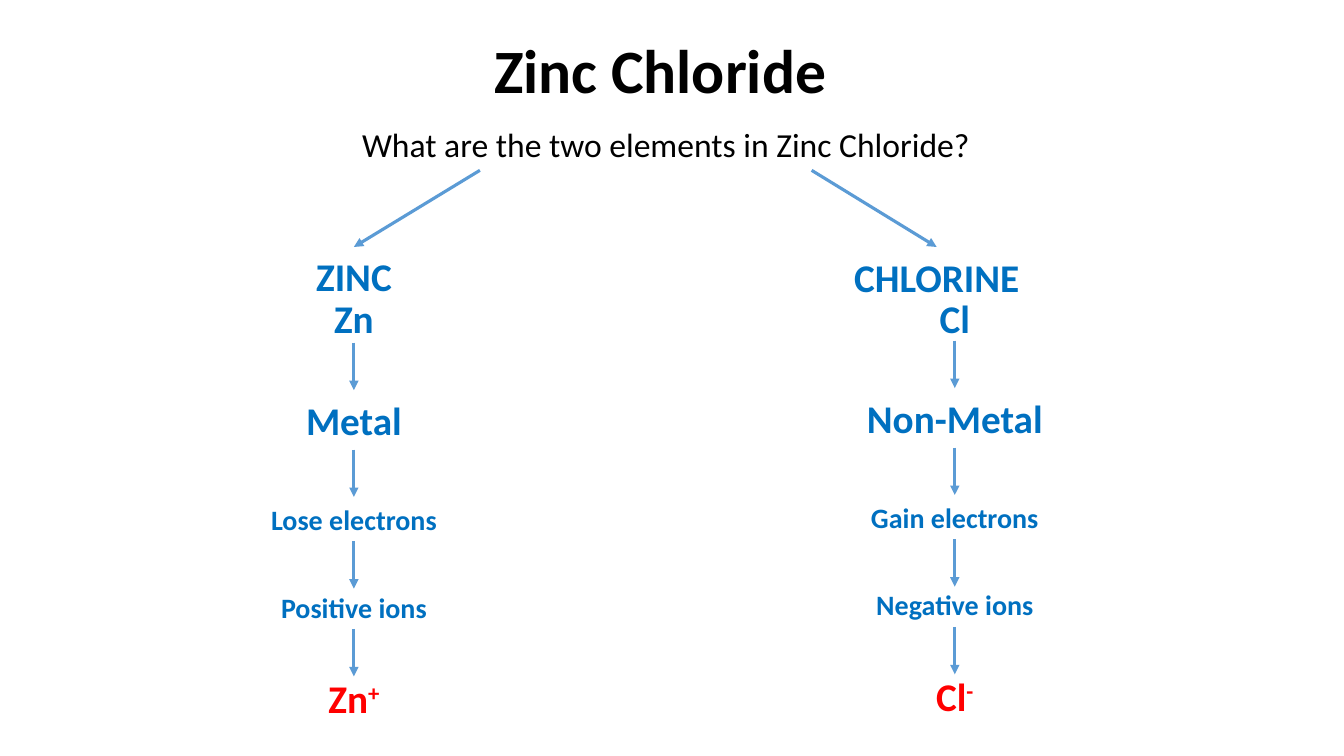
import pptx
import pptx.util
import pptx.dml.color
import pptx.enum.shapes
import pptx.enum.text
import pptx.oxml.ns
import lxml.etree

PX = 9144  # EMU per px, 100 px to the inch
COLORS = {"ink": "000000", "step": "0070C0", "ion": "FF0000", "arrow": "5B9BD5"}
COLUMN_WIDTH = 228
ARROW_LENGTH = 47
LARGE, SMALL = 28, 20
TEXT_HEIGHT = {LARGE: 57, SMALL: 44}
# Tops of each arrow and the step below it, relative to the column
STEP_ROWS = [(95, 143, LARGE), (201, 248, SMALL), (292, 335, SMALL)]
ION_ARROW, ION_TOP = 379, 419


def emu(*lengths):
    return [pptx.util.Emu(length * PX) for length in lengths]


def rgb(name):
    return pptx.dml.color.RGBColor.from_string(COLORS[name])


def add_text(page, bounds, text, size, color, bold=True, charge="", line_spacing=1.0):
    box = page.shapes.add_textbox(*emu(*bounds))
    frame = box.text_frame
    frame_format = {
        "word_wrap": True,
        "vertical_anchor": pptx.enum.text.MSO_ANCHOR.MIDDLE,
    }
    for name, value in frame_format.items():
        setattr(frame, name, value)
    para = frame.paragraphs[0]
    para.alignment = pptx.enum.text.PP_ALIGN.CENTER
    para.line_spacing = line_spacing
    font_format = {"name": "Calibri", "size": pptx.util.Pt(size), "bold": bold}
    for part in filter(None, (text, charge)):
        span = para.add_run()
        span.text = part
        for name, value in font_format.items():
            setattr(span.font, name, value)
        span.font.color.rgb = rgb(color)
    if charge:
        span.font._element.set("baseline", "30000")


def add_arrow(page, start, end):
    arrow = page.shapes.add_connector(
        pptx.enum.shapes.MSO_CONNECTOR.STRAIGHT, *emu(*start, *end)
    )
    arrow.line.color.rgb = rgb("arrow")
    arrow.line.width = pptx.util.Pt(2.25)
    qn = pptx.oxml.ns.qn
    line = arrow.line._get_or_add_ln()
    lxml.etree.SubElement(line, qn("a:tailEnd"), type="triangle")
    lxml.etree.SubElement(arrow._element.spPr, qn("a:effectLst"))


def add_heading(page, left, top, width):
    add_text(page, (left, top, width, 145), "Zinc Chloride", 44, "ink", line_spacing=0.9)
    question = "What are the two elements in Zinc Chloride?"
    add_text(page, (left + 51, top + 118, 1059, 50), question, 24, "ink", bold=False)
    # Branches to the two elements
    for start, end in ((396, 271), (725, 849)):
        add_arrow(page, (left + start, top + 169), (left + end, top + 245))


def add_element_column(page, left, top, name, symbol, steps, charge, name_shift=(0, 0), lift=0):
    def place(row, text, size, color="step", shift=0, **extra):
        bounds = (left + shift, top + row, COLUMN_WIDTH, TEXT_HEIGHT[size])
        add_text(page, bounds, text, size, color, **extra)

    def point_down(row):
        center, start = left + COLUMN_WIDTH // 2, top + row - lift
        add_arrow(page, (center, start), (center, start + ARROW_LENGTH))

    # Name and symbol
    shift, drop = name_shift
    place(drop, name, LARGE, shift=shift)
    place(42, symbol, LARGE)
    # Steps from kind of element to kind of ion
    for (arrow_row, text_row, size), step in zip(STEP_ROWS, steps):
        point_down(arrow_row)
        place(text_row - lift, step, size)
    # Resulting ion
    point_down(ION_ARROW)
    place(ION_TOP - lift, symbol, LARGE, "ion", charge=charge)


def main():
    deck = pptx.Presentation()
    deck.slide_width, deck.slide_height = emu(1333, 750)
    page = deck.slides.add_slide(deck.slide_layouts[6])
    add_heading(page, 80, 0, 1150)
    add_element_column(page, 237, 245, "ZINC", "Zn",
                       ("Metal", "Lose electrons", "Positive ions"), "+")
    add_element_column(page, 833, 245, "CHLORINE", "Cl",
                       ("Non-Metal", "Gain electrons", "Negative ions"), "-",
                       name_shift=(-18, 1), lift=2)
    deck.save("out.pptx")


if __name__ == "__main__":
    main()
